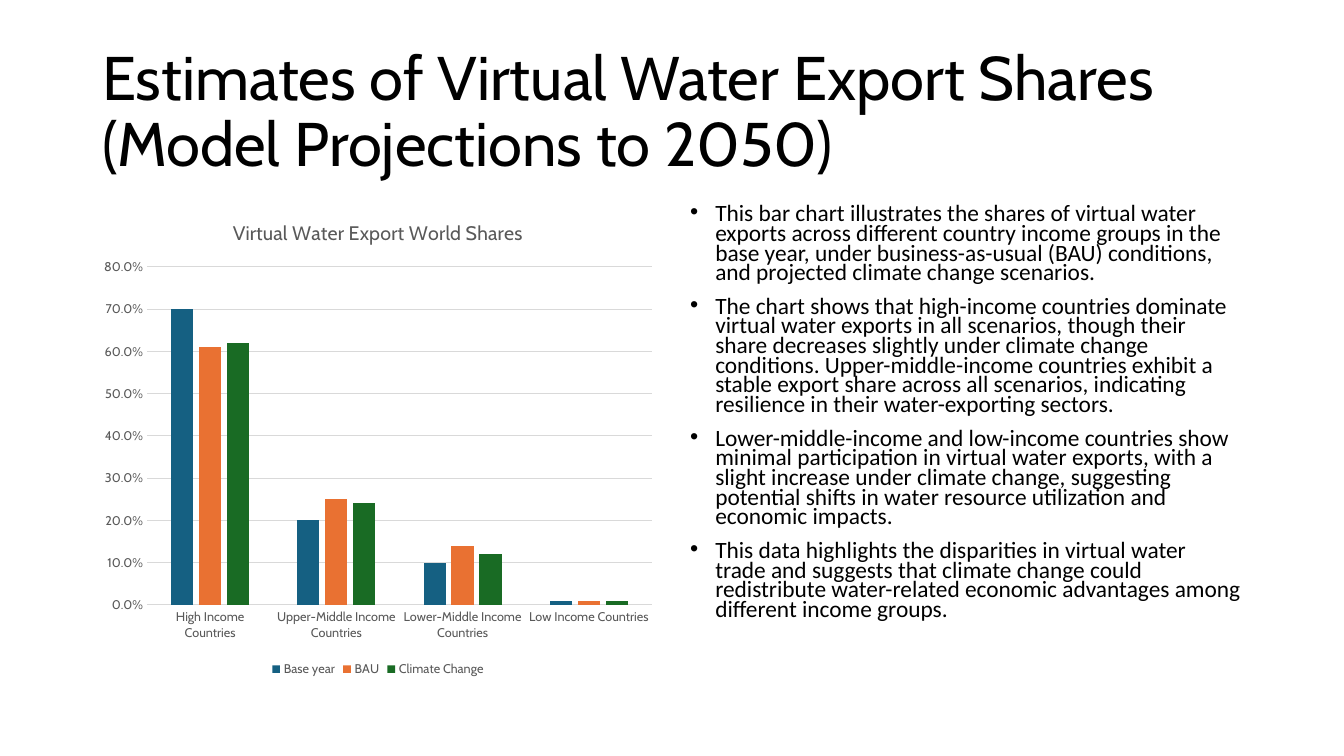
from dataclasses import dataclass

from lxml.etree import SubElement
from pptx import Presentation
from pptx.chart.data import CategoryChartData
from pptx.dml.color import RGBColor
from pptx.enum.chart import XL_CHART_TYPE, XL_LEGEND_POSITION, XL_TICK_MARK
from pptx.enum.text import MSO_ANCHOR, MSO_AUTO_SIZE, PP_ALIGN
from pptx.oxml.ns import qn
from pptx.util import Inches, Pt

# Content
TITLE = "Estimates of Virtual Water Export Shares (Model Projections to 2050)"
CHART_TITLE = "Virtual Water Export World Shares"
INCOME_GROUPS = [
    "High Income Countries",
    "Upper-Middle Income Countries",
    "Lower-Middle Income Countries",
    "Low Income Countries",
]
SCENARIOS = [
    ("Base year", "156082", (0.7, 0.2, 0.1, 0.01)),
    ("BAU", "E97132", (0.61, 0.25, 0.14, 0.01)),
    ("Climate Change", "196B24", (0.62, 0.24, 0.12, 0.01)),
]
FINDINGS = [
    "This bar chart illustrates the shares of virtual water exports across different "
    "country income groups in the base year, under business-as-usual (BAU) conditions, "
    "and projected climate change scenarios.",
    "The chart shows that high-income countries dominate virtual water exports in all "
    "scenarios, though their share decreases slightly under climate change conditions. "
    "Upper-middle-income countries exhibit a stable export share across all scenarios, "
    "indicating resilience in their water-exporting sectors.",
    "Lower-middle-income and low-income countries show minimal participation in virtual "
    "water exports, with a slight increase under climate change, suggesting potential "
    "shifts in water resource utilization and economic impacts.",
    "This data highlights the disparities in virtual water trade and suggests that "
    "climate change could redistribute water-related economic advantages among "
    "different income groups.",
]


@dataclass(frozen=True)
class Theme:
    heading_font: str = "Cabin"
    body_font: str = "Calibri"
    text: str = "000000"
    muted: str = "595959"
    grid: str = "D9D9D9"
    title_size: float = 44
    body_size: float = 16.7
    chart_title_size: float = 14
    chart_size: float = 10
    label_size: float = 9


THEME = Theme()

# Layout in px
EMU_PER_PX = 914400 / 100.8
SLIDE_WIDTH, SLIDE_HEIGHT = 1344, 756
MARGIN, COLUMN_GAP = 92, 16
TITLE_TOP, TITLE_HEIGHT = 40, 147
CONTENT_TOP, CONTENT_HEIGHT = 201, 480
CONTENT_WIDTH = SLIDE_WIDTH - 2 * MARGIN
COLUMN_WIDTH = (CONTENT_WIDTH - COLUMN_GAP) // 2
PLOT_LEFT, PLOT_TOP, PLOT_WIDTH, PLOT_HEIGHT = 55, 66, 505, 338


def px(length):
    return round(length * EMU_PER_PX)


def apply(target, values):
    for name, value in values.items():
        setattr(target, name, value)


def style_font(font, name, size, color):
    apply(font, {"name": name, "size": Pt(size), "bold": False})
    font.color.rgb = RGBColor.from_string(color)


def style_line(line):
    line.color.rgb = RGBColor.from_string(THEME.grid)
    line.width = Pt(0.75)


def place(shape, left, top, width, height):
    apply(shape, {"left": px(left), "top": px(top),
                  "width": px(width), "height": px(height)})


def add_bullet(paragraph):
    properties = paragraph._p.get_or_add_pPr()
    properties.set("marL", str(Inches(0.25)))
    properties.set("indent", str(-Inches(0.25)))
    SubElement(properties, qn("a:buFont")).set("typeface", "Arial")
    SubElement(properties, qn("a:buChar")).set("char", "•")


def place_plot(chart):
    plot_area = chart._chartSpace.chart.plotArea
    for old_layout in plot_area.findall(qn("c:layout")):
        plot_area.remove(old_layout)
    layout = SubElement(plot_area, qn("c:layout"))
    plot_area.insert(0, layout)
    manual = SubElement(layout, qn("c:manualLayout"))
    settings = {
        "layoutTarget": "inner", "xMode": "edge", "yMode": "edge",
        "x": PLOT_LEFT / COLUMN_WIDTH, "y": PLOT_TOP / CONTENT_HEIGHT,
        "w": PLOT_WIDTH / COLUMN_WIDTH, "h": PLOT_HEIGHT / CONTENT_HEIGHT,
    }
    for name, value in settings.items():
        SubElement(manual, qn(f"c:{name}")).set("val", str(value))


def fill_title(shape):
    place(shape, MARGIN, TITLE_TOP, CONTENT_WIDTH, TITLE_HEIGHT)
    frame = shape.text_frame
    frame.text = TITLE
    apply(frame, {"word_wrap": True, "auto_size": MSO_AUTO_SIZE.NONE,
                  "vertical_anchor": MSO_ANCHOR.MIDDLE})
    paragraph = frame.paragraphs[0]
    apply(paragraph, {"alignment": PP_ALIGN.LEFT, "line_spacing": 0.9})
    style_font(paragraph.runs[0].font, THEME.heading_font, THEME.title_size, THEME.text)


def fill_findings(shape):
    place(shape, MARGIN + COLUMN_WIDTH + COLUMN_GAP, CONTENT_TOP,
          COLUMN_WIDTH, CONTENT_HEIGHT)
    frame = shape.text_frame
    frame.text = "\n".join(FINDINGS)
    apply(frame, {"word_wrap": True, "auto_size": MSO_AUTO_SIZE.NONE,
                  "vertical_anchor": MSO_ANCHOR.TOP})
    for paragraph in frame.paragraphs:
        apply(paragraph, {"alignment": PP_ALIGN.LEFT, "line_spacing": 0.7,
                          "space_before": Pt(10)})
        add_bullet(paragraph)
        style_font(paragraph.runs[0].font, THEME.body_font, THEME.body_size, THEME.text)


def add_share_chart(slide):
    data = CategoryChartData(number_format="0.0%")
    data.categories = INCOME_GROUPS
    for name, _, shares in SCENARIOS:
        data.add_series(name, shares)
    box = (MARGIN, CONTENT_TOP, COLUMN_WIDTH, CONTENT_HEIGHT)
    chart = slide.shapes.add_chart(
        XL_CHART_TYPE.COLUMN_CLUSTERED, *map(px, box), data).chart
    style_font(chart.font, THEME.heading_font, THEME.chart_size, THEME.text)
    place_plot(chart)

    # Title and legend
    chart.has_title = True
    chart.chart_title.include_in_layout = False
    title_frame = chart.chart_title.text_frame
    title_frame.text = CHART_TITLE
    style_font(title_frame.paragraphs[0].runs[0].font, THEME.heading_font,
               THEME.chart_title_size, THEME.muted)
    chart.has_legend = True
    apply(chart.legend, {"position": XL_LEGEND_POSITION.BOTTOM,
                         "include_in_layout": False})
    style_font(chart.legend.font, THEME.heading_font, THEME.label_size, THEME.muted)

    # Axes
    category_axis, value_axis = chart.category_axis, chart.value_axis
    for axis in (category_axis, value_axis):
        apply(axis, {"major_tick_mark": XL_TICK_MARK.NONE,
                     "minor_tick_mark": XL_TICK_MARK.NONE})
        style_font(axis.tick_labels.font, THEME.heading_font,
                   THEME.label_size, THEME.muted)
    style_line(category_axis.format.line)
    apply(value_axis, {"minimum_scale": 0, "maximum_scale": 0.8, "major_unit": 0.1,
                       "has_major_gridlines": True})
    apply(value_axis.tick_labels, {"number_format": "0.0%",
                                   "number_format_is_linked": False})
    value_axis.format.line.fill.background()
    style_line(value_axis.major_gridlines.format.line)

    # Columns
    plot = chart.plots[0]
    apply(plot, {"gap_width": 219, "overlap": -27, "vary_by_categories": False})
    for series, (_, color, _) in zip(plot.series, SCENARIOS):
        series.format.fill.solid()
        series.format.fill.fore_color.rgb = RGBColor.from_string(color)


def main():
    presentation = Presentation()
    apply(presentation, {"slide_width": px(SLIDE_WIDTH), "slide_height": px(SLIDE_HEIGHT)})
    slide = presentation.slides.add_slide(presentation.slide_layouts[1])
    fill_title(slide.shapes.title)
    add_share_chart(slide)
    fill_findings(slide.placeholders[1])
    presentation.save("out.pptx")


if __name__ == "__main__":
    main()
